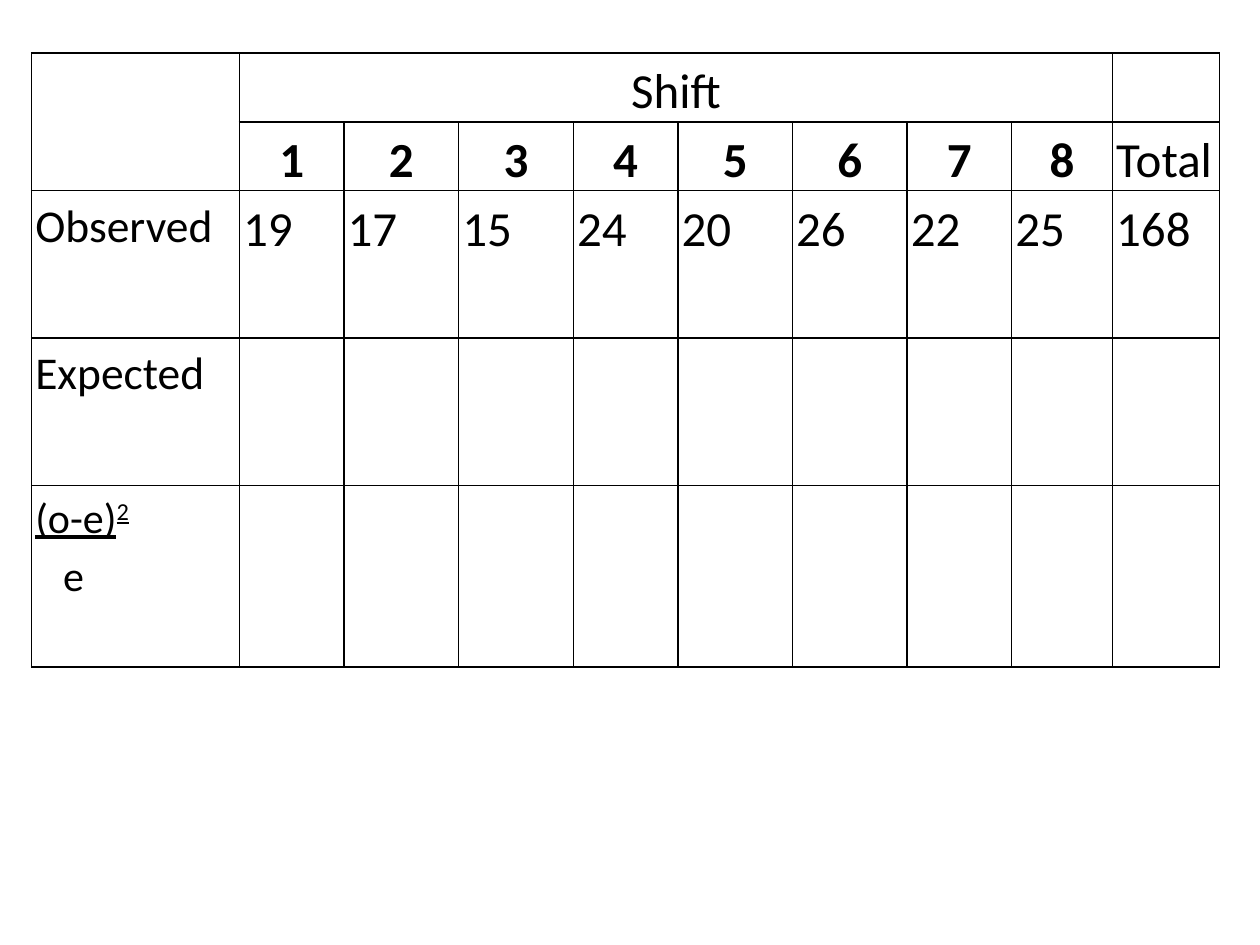
from lxml import etree
from pptx import Presentation
from pptx.dml.color import RGBColor
from pptx.enum.text import PP_ALIGN
from pptx.oxml.ns import qn
from pptx.util import Inches, Pt

CENTER, LEFT = PP_ALIGN.CENTER, PP_ALIGN.LEFT
FONT, BLACK = "Calibri", "000000"
COLUMN_WIDTHS = [1.65, 0.83, 0.91, 0.91, 0.83, 0.91, 0.91, 0.83, 0.8, 0.85]
ROW_HEIGHTS = [0.5, 0.5, 1.17, 1.17, 1.44]
SHIFTS = range(1, 9)
OBSERVED = [19, 17, 15, 24, 20, 26, 22, 25]


def color(hex_value):
    return RGBColor.from_string(hex_value)


def format_para(para, size, align=LEFT, bold=False):
    para.alignment = align
    para.line_spacing = 1.15
    for span in para.runs:
        span.font.name = FONT
        span.font.size = Pt(size)
        span.font.bold = bold
        span.font.color.rgb = color(BLACK)


def write(cell, text, size=28, align=LEFT, bold=False):
    cell.text_frame.text = str(text)
    format_para(cell.text_frame.paragraphs[0], size, align, bold)


def style_cell(cell):
    """Narrow margins, thin black borders and no fill."""
    cell.margin_left = cell.margin_right = Inches(0.03)
    cell.margin_top = cell.margin_bottom = 0
    properties = cell._tc.get_or_add_tcPr()
    for side in ("a:lnL", "a:lnR", "a:lnT", "a:lnB"):
        line = etree.SubElement(properties, qn(side), w=str(Pt(1)))
        fill = etree.SubElement(line, qn("a:solidFill"))
        etree.SubElement(fill, qn("a:srgbClr"), val=BLACK)
    cell.fill.background()


def write_fraction(cell):
    """Squared difference, underlined as a numerator, over e."""
    numerator = cell.text_frame.paragraphs[0]
    for text in ("(o-e)", "2"):
        span = numerator.add_run()
        span.text = text
        span.font.underline = True
    span.font._element.set("baseline", "30000")
    denominator = cell.text_frame.add_paragraph()
    denominator.text = "e"
    denominator._p.get_or_add_pPr().set("marL", str(Inches(0.22)))
    for para in (numerator, denominator):
        format_para(para, 24)


def add_shift_table(page, left, top, width, height):
    frame = page.shapes.add_table(len(ROW_HEIGHTS), len(COLUMN_WIDTHS),
                                  left, top, width, height)
    table = frame.table
    table.first_row = table.horz_banding = False
    for column, size in zip(table.columns, COLUMN_WIDTHS):
        column.width = Inches(size)
    for row, size in zip(table.rows, ROW_HEIGHTS):
        row.height = Inches(size)
    for cell in table.iter_cells():
        style_cell(cell)

    # Header rows
    table.cell(0, 0).merge(table.cell(1, 0))
    table.cell(0, 1).merge(table.cell(0, 8))
    write(table.cell(0, 1), "Shift", align=CENTER)
    for column, shift in enumerate(SHIFTS, 1):
        write(table.cell(1, column), shift, align=CENTER, bold=True)
    write(table.cell(1, 9), "Total")

    # Row labels
    write(table.cell(2, 0), "Observed", size=26)
    write(table.cell(3, 0), "Expected", size=26)
    write_fraction(table.cell(4, 0))

    # Observed counts and their total
    for column, count in enumerate(OBSERVED + [sum(OBSERVED)], 1):
        write(table.cell(2, column), count)


def main():
    deck = Presentation()
    deck.slide_width, deck.slide_height = Inches(10), Inches(7.5)
    page = deck.slides.add_slide(deck.slide_layouts[6])
    add_shift_table(page, Inches(0.25), Inches(0.42),
                    Inches(sum(COLUMN_WIDTHS)), Inches(sum(ROW_HEIGHTS)))
    deck.save("out.pptx")


if __name__ == "__main__":
    main()
